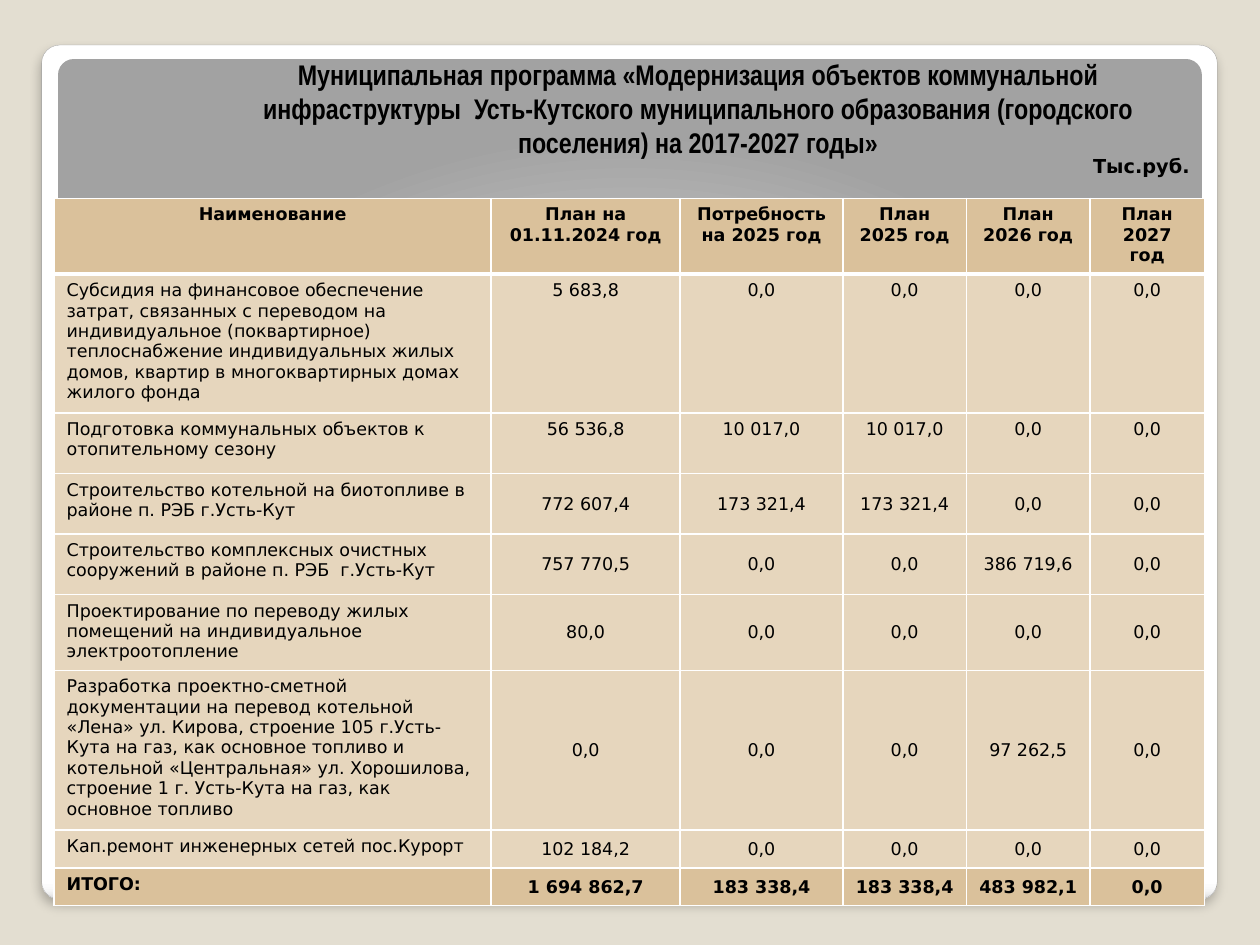
from lxml.etree import SubElement
from pptx import Presentation
from pptx.dml.color import RGBColor
from pptx.enum.shapes import MSO_SHAPE as Shape
from pptx.enum.text import MSO_ANCHOR as Anchor, PP_ALIGN as Align
from pptx.oxml import parse_xml
from pptx.oxml.ns import nsdecls, qn
from pptx.util import Cm, Pt

TITLE = ("Муниципальная программа «Модернизация объектов коммунальной "
         "инфраструктуры  Усть-Кутского муниципального образования "
         "(городского поселения) на 2017-2027 годы»")
UNIT = "Тыс.руб."
HEADER = ["Наименование", "План на 01.11.2024 год", "Потребность на 2025 год",
          "План\n2025 год", "План\n2026 год", "План\n2027 год"]
ROWS = [
    ["Субсидия на финансовое обеспечение затрат, связанных с переводом на "
     "индивидуальное (поквартирное) теплоснабжение индивидуальных жилых домов, "
     "квартир в многоквартирных домах жилого фонда",
     "5 683,8", "0,0", "0,0", "0,0", "0,0"],
    ["Подготовка коммунальных объектов к отопительному сезону",
     "56 536,8", "10 017,0", "10 017,0", "0,0", "0,0"],
    ["Строительство котельной на биотопливе в районе п. РЭБ г.Усть-Кут",
     "772 607,4", "173 321,4", "173 321,4", "0,0", "0,0"],
    ["Строительство комплексных очистных сооружений в районе п. РЭБ  г.Усть-Кут",
     "757 770,5", "0,0", "0,0", "386 719,6", "0,0"],
    ["Проектирование по переводу жилых помещений на индивидуальное электроотопление",
     "80,0", "0,0", "0,0", "0,0", "0,0"],
    ["Разработка проектно-сметной документации на перевод котельной «Лена» "
     "ул. Кирова, строение 105 г.Усть-Кута на газ, как основное топливо и "
     "котельной «Центральная» ул. Хорошилова, строение 1 г. Усть-Кута на газ, "
     "как основное топливо",
     "0,0", "0,0", "0,0", "97 262,5", "0,0"],
    ["Кап.ремонт инженерных сетей пос.Курорт",
     "102 184,2", "0,0", "0,0", "0,0", "0,0"],
]
TOTAL = ["ИТОГО:", "1 694 862,7", "183 338,4", "183 338,4", "483 982,1", "0,0"]
COLUMN_WIDTHS = [8.81, 3.81, 3.28, 2.49, 2.49, 2.31]
ROW_HEIGHTS = [1.22, 2.21, 1.22, 1.22, 1.22, 1.22, 2.64, 0.76, 0.76]
STRONG, PALE = "DAC19B", "E6D6BD"
FIRST_MIDDLE_ROW = 3


def color(value):
    return RGBColor.from_string(value)


def write(frame, text, size=10, font="DejaVu Sans", bold=False,
          align=Align.CENTER, anchor=Anchor.TOP):
    frame.word_wrap = True
    frame.vertical_anchor = anchor
    for index, line in enumerate(text.split("\n")):
        para = frame.paragraphs[0] if index == 0 else frame.add_paragraph()
        para.alignment = align
        span = para.add_run()
        span.text = line
        span.font.size = Pt(size)
        span.font.name = font
        span.font.bold = bold
        span.font.color.rgb = color("000000")


def add_box(page, place, text, margin=0.25, **style):
    box = page.shapes.add_textbox(*map(Cm, place))
    box.text_frame.margin_left = box.text_frame.margin_right = Cm(margin)
    write(box.text_frame, text, **style)


def add_panel(page, place, stops, direction):
    panel = page.shapes.add_shape(Shape.ROUNDED_RECTANGLE, *map(Cm, place))
    panel.adjustments[0] = 0.021
    panel.shadow.inherit = False
    panel.line.fill.background()
    panel.fill.background()
    marks = "".join(f'<a:gs pos="{position * 1000}"><a:srgbClr val="{value}"/></a:gs>'
                    for position, value in stops)
    properties = panel.fill._xPr
    properties.replace(properties.find(qn("a:noFill")), parse_xml(
        f'<a:gradFill {nsdecls("a")} rotWithShape="1"><a:gsLst>{marks}</a:gsLst>'
        f'{direction}</a:gradFill>'))
    return panel


def add_shadow(panel):
    effects = panel.fill._xPr.find(qn("a:effectLst"))
    effects.append(parse_xml(
        f'<a:outerShdw {nsdecls("a")} blurRad="{Pt(6)}" dist="{Pt(4)}" dir="5400000" '
        'algn="tl" rotWithShape="0"><a:srgbClr val="000000"><a:alpha val="25000"/>'
        '</a:srgbClr></a:outerShdw>'))


def set_borders(cell, **widths):
    properties = cell._tc.get_or_add_tcPr()
    for side in "LRTB":
        line = SubElement(properties, qn(f"a:ln{side}"), w=str(Pt(widths.get(side, 1))))
        SubElement(SubElement(line, qn("a:solidFill")), qn("a:srgbClr"), val="FFFFFF")


def add_budget_table(page, left, top):
    content = [HEADER, *ROWS, TOTAL]
    table = page.shapes.add_table(
        len(content), len(HEADER), Cm(left), Cm(top),
        Cm(sum(COLUMN_WIDTHS)), Cm(sum(ROW_HEIGHTS))).table
    table.first_row = table.horz_banding = False
    for column, width in zip(table.columns, COLUMN_WIDTHS):
        column.width = Cm(width)
    for r, (texts, height) in enumerate(zip(content, ROW_HEIGHTS)):
        table.rows[r].height = Cm(height)
        strong = r in (0, len(content) - 1)
        for c, text in enumerate(texts):
            cell = table.cell(r, c)
            set_borders(cell, T=3 if r == 1 else 1, B=3 if r == 0 else 1)
            cell.fill.solid()
            cell.fill.fore_color.rgb = color(STRONG if strong else PALE)
            write(cell.text_frame, text, bold=strong,
                  align=Align.LEFT if c == 0 and r else Align.CENTER)
            if c and r >= FIRST_MIDDLE_ROW:
                cell.vertical_anchor = Anchor.MIDDLE
                cell.margin_left = cell.margin_right = cell.margin_top = Cm(0.02)
                cell.margin_bottom = Cm(0)


def main():
    deck = Presentation()
    deck.slide_width, deck.slide_height = Cm(25.4), Cm(19.05)
    page = deck.slides.add_slide(deck.slide_layouts[6])
    page.background.fill.solid()
    page.background.fill.fore_color.rgb = color("E3DED1")

    card = add_panel(page, (0.84, 0.91, 23.7, 17.22),
                     [(0, "FFFFFF"), (98, "FFFFFF"), (99, "F7F7F7"), (100, "DADADA")],
                     '<a:lin ang="5400000" scaled="0"/>')
    card.line.color.rgb = color("A4A4A4")
    card.line.width = Pt(0.16)
    add_shadow(card)
    add_panel(page, (1.17, 1.19, 23.06, 15.24),
              [(0, "FFFFFF"), (55, "E1E1E1"), (100, "A2A2A2")],
              '<a:path path="circle"><a:fillToRect l="50000" t="175000" '
              'r="50000" b="-75000"/></a:path>')

    add_box(page, (3.86, 1.12, 20.42, 2.21), TITLE, margin=0.9, size=16.2,
            font="Arial Narrow", bold=True, anchor=Anchor.BOTTOM)
    add_budget_table(page, 1.09, 4)
    add_box(page, (21.74, 3.02, 2.54, 0.64), UNIT, size=11, bold=True,
            anchor=Anchor.MIDDLE)
    deck.save("out.pptx")


if __name__ == "__main__":
    main()
